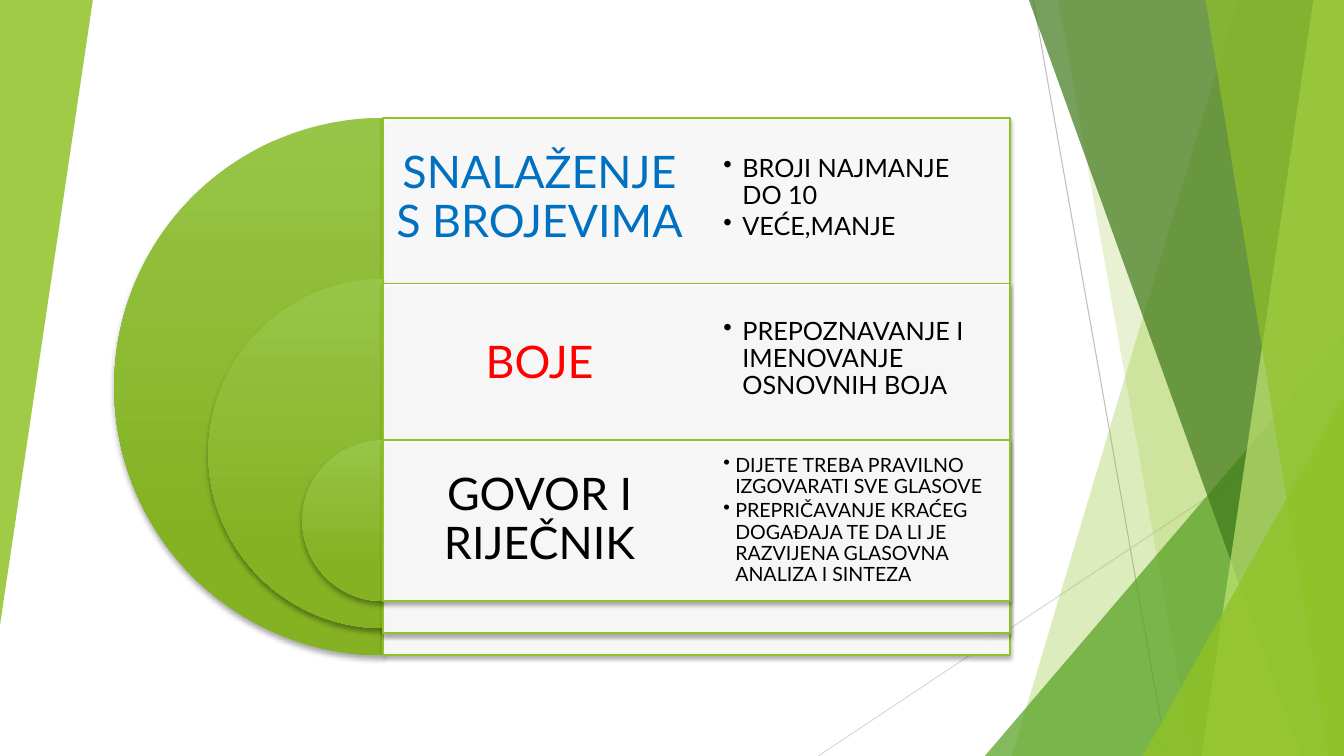
from dataclasses import dataclass

from lxml.etree import SubElement
from pptx import Presentation
from pptx.dml.color import RGBColor
from pptx.enum.shapes import MSO_CONNECTOR, MSO_SHAPE
from pptx.enum.text import MSO_ANCHOR, PP_ALIGN
from pptx.oxml.ns import qn
from pptx.shapes.autoshape import Shape
from pptx.shapes.shapetree import SlideShapes
from pptx.text.text import TextFrame, _Paragraph
from pptx.util import Cm, Pt

WIDE, HIGH = 33.87, 19.05
GREEN = "90C226"
FONT = "Lato"
AXIS, TOP, STEP = 9.65, 2.97, 4.06  # common centre line, first row, row height
HALF = 7.9  # width of one text column
LARGE, SHRINK = 13.54, 4.74  # first half disc, change from row to row


@dataclass
class Ray:
    x1: float
    y1: float
    x2: float
    y2: float
    color: str


@dataclass
class Pane:
    """Facet that runs from a slanted left side to the right slide edge."""
    top: float
    base: float
    color: str
    alpha: int


@dataclass
class Wedge:
    left: float
    top: float
    wide: float
    high: float
    color: str
    alpha: int
    turn: int = 0


@dataclass
class Row:
    head: str
    color: str
    items: list[str]
    size: int = 18
    hang: float = 0.48
    drop: float = 0


RAYS = [Ray(26.04, 0, 29.41, HIGH, "BFBFBF"),
        Ray(WIDE, 10.24, 20.62, HIGH, "D9D9D9")]
FACETS = [
    Pane(31.19, 25.5, GREEN, 30),
    Pane(26.67, 30.05, GREEN, 20),
    Wedge(24.82, 8.46, 9.05, 10.59, "54A021", 72),
    Pane(25.93, 32.79, "3F7819", 70),
    Pane(33.1, 30.28, "C0E474", 70),
    Pane(30.38, 33.48, GREEN, 65),
    Wedge(28.8, 9.98, 5.07, 9.07, GREEN, 80),
    Wedge(0, 0, 2.34, 15.75, GREEN, 85, 180),
]
ROWS = [
    Row("SNALAŽENJE S BROJEVIMA", "0070C0",
        ["BROJI NAJMANJE DO 10", "VEĆE,MANJE"]),
    Row("BOJE", "FF0000", ["PREPOZNAVANJE I IMENOVANJE OSNOVNIH BOJA"],
        drop=0.12),
    Row("GOVOR I RIJEČNIK", "000000",
        ["DIJETE TREBA PRAVILNO IZGOVARATI SVE GLASOVE",
         "PREPRIČAVANJE KRAĆEG DOGAĐAJA TE DA LI JE RAZVIJENA "
         "GLASOVNA ANALIZA I SINTEZA"], size=14, hang=0.3),
]


def ink(color: str) -> RGBColor:
    return RGBColor.from_string(color)


def fade(shape: Shape, color: str, alpha: int) -> None:
    """Fill with a see-through colour, without line or shadow."""
    shape.fill.solid()
    shape.fill.fore_color.rgb = ink(color)
    tone = shape.element.spPr.find(qn("a:solidFill")).find(qn("a:srgbClr"))
    SubElement(tone, qn("a:alpha"), val=str(alpha * 1000))
    shape.line.fill.background()
    shape.shadow.inherit = False


def shade(shape: Shape, blur: int, dist: int) -> None:
    """Cast a soft shadow straight down; blur and distance in points."""
    shape.shadow.inherit = False
    glow = SubElement(shape.element.spPr.find(qn("a:effectLst")),
                      qn("a:outerShdw"), blurRad=str(Pt(blur)),
                      dist=str(Pt(dist)), dir="5400000", rotWithShape="0")
    tone = SubElement(glow, qn("a:srgbClr"), val="000000")
    SubElement(tone, qn("a:alpha"), val="35000")


def add_ray(shapes: SlideShapes, ray: Ray) -> None:
    line = shapes.add_connector(MSO_CONNECTOR.STRAIGHT, Cm(ray.x1), Cm(ray.y1),
                                Cm(ray.x2), Cm(ray.y2))
    line.line.color.rgb = ink(ray.color)
    line.line.width = Pt(0.75)
    SubElement(line.element.spPr, qn("a:effectLst"))


def add_facet(shapes: SlideShapes, facet: Pane | Wedge) -> None:
    if isinstance(facet, Pane):
        form = shapes.build_freeform(Cm(facet.top), 0)
        form.add_line_segments([(Cm(WIDE), 0), (Cm(WIDE), Cm(HIGH)),
                                (Cm(facet.base), Cm(HIGH))], close=True)
        shape = form.convert_to_shape()
    else:
        shape = shapes.add_shape(MSO_SHAPE.ISOSCELES_TRIANGLE, Cm(facet.left),
                                 Cm(facet.top), Cm(facet.wide), Cm(facet.high))
        shape.adjustments[0] = 1
        shape.rotation = facet.turn
    fade(shape, facet.color, facet.alpha)


def add_disc(shapes: SlideShapes, top: float, size: float) -> None:
    disc = shapes.add_shape(MSO_SHAPE.PIE, Cm(AXIS - size / 2), Cm(top),
                            Cm(size), Cm(size))
    disc.adjustments[0], disc.adjustments[1] = 54, 162
    disc.fill.gradient()
    disc.fill.gradient_angle = 270
    for stop, color, place in zip(disc.fill.gradient_stops,
                                  ("97C547", "84B223"), (0, 0.78)):
        stop.color.rgb = ink(color)
        stop.position = place
    disc.line.fill.background()
    shade(disc, 4, 3)


def add_panel(shapes: SlideShapes, top: float, high: float) -> None:
    panel = shapes.add_shape(MSO_SHAPE.RECTANGLE, Cm(AXIS), Cm(top),
                             Cm(2 * HALF), Cm(high))
    fade(panel, "FFFFFF", 90)
    panel.line.color.rgb = ink(GREEN)
    panel.line.width = Pt(1)
    shade(panel, 3, 2)


def add_box(shapes: SlideShapes, left: float, top: float,
            inset: float) -> TextFrame:
    frame = shapes.add_textbox(Cm(left), Cm(top), Cm(HALF), Cm(STEP)).text_frame
    frame.word_wrap = True
    frame.vertical_anchor = MSO_ANCHOR.MIDDLE
    frame.margin_left = frame.margin_right = Cm(inset)
    frame.margin_top = frame.margin_bottom = Cm(inset)
    return frame


def style(para: _Paragraph, size: int, color: str, gap: float) -> None:
    """Set font and spacing; the gap below is a share of the size."""
    para.line_spacing = 0.9
    para.space_after = Pt(size * gap)
    para.font.name = FONT
    para.font.size = Pt(size)
    para.font.color.rgb = ink(color)


def add_head(shapes: SlideShapes, row: Row, top: float) -> None:
    para = add_box(shapes, AXIS, top, 0.33).paragraphs[0]
    para.text = row.head
    para.alignment = PP_ALIGN.CENTER
    style(para, 32, row.color, 0.35)


def add_items(shapes: SlideShapes, row: Row, top: float) -> None:
    frame = add_box(shapes, AXIS + HALF, top, 0.68)
    frame.text = "\n".join(row.items)
    for para in frame.paragraphs:
        props = para._p.get_or_add_pPr()
        props.set("marL", str(Cm(row.hang)))
        props.set("indent", str(-Cm(row.hang)))
        SubElement(props, qn("a:buChar"), char="•")
        style(para, row.size, "000000", 0.15)


def main() -> None:
    deck = Presentation()
    deck.slide_width, deck.slide_height = Cm(WIDE), Cm(HIGH)
    shapes = deck.slides.add_slide(deck.slide_layouts[6]).shapes
    for ray in RAYS:
        add_ray(shapes, ray)
    for facet in FACETS:
        add_facet(shapes, facet)
    for i, row in enumerate(ROWS):
        top, size = TOP + i * STEP, LARGE - i * SHRINK
        add_disc(shapes, top, size)
        add_panel(shapes, top + row.drop, size)
        add_head(shapes, row, top + row.drop)
    for i, row in enumerate(ROWS):
        add_items(shapes, row, TOP + i * STEP)
    deck.save("out.pptx")


if __name__ == "__main__":
    main()
